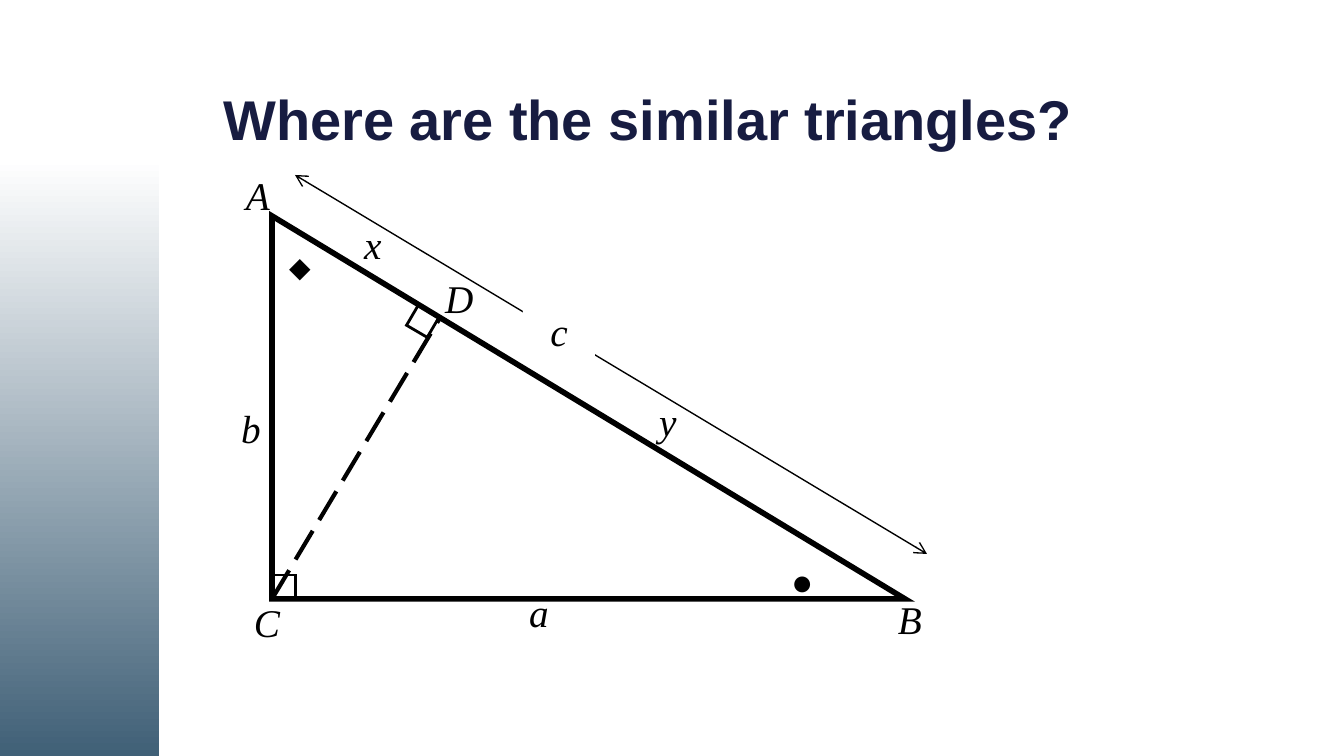
from pptx import Presentation
from pptx.dml.color import RGBColor
from pptx.enum.dml import MSO_LINE
from pptx.enum.shapes import MSO_CONNECTOR, MSO_SHAPE
from pptx.enum.text import MSO_ANCHOR, PP_ALIGN
from pptx.oxml.ns import qn
from pptx.util import Pt
from lxml.etree import SubElement

# Content: text, box in px
TITLE = ("Where are the similar triangles?", (210, 78, 898, 82))
POINTS = [
    ("D", (445, 274, 43, 59)),
    ("A", (246, 171, 43, 59)),
    ("C", (254, 598, 40, 59)),
    ("B", (898, 595, 43, 59)),
]
SIDES = [
    ("a", (516, 582, 87, 74)),
    ("b", (228, 398, 85, 79)),
    ("x", (351, 214, 105, 73)),
    ("y", (646, 391, 95, 85)),
]
LONG = ("c", (523, 301, 72, 58))
DOT = ("•", (778, 546, 67, 67))
GEM = ("◆", (276, 243, 67, 47))

# Figure corners in px
WIDE, HIGH = 1344, 756
LEFT, TOP, RIGHT, BASE = 272, 216, 905, 599
FOOT = (440, 318)
SPAN = ((927, 554), (295, 175))
MARK = 24
TILT = 300.4


class Theme:
    ink = RGBColor(0, 0, 0)
    line = RGBColor(1, 1, 1)
    white = RGBColor(255, 255, 255)
    band = RGBColor(0x40, 0x60, 0x77)
    title = dict(name="Arial", size=Pt(30), bold=True)
    head = RGBColor(0x17, 0x1C, 0x41)
    label = dict(name="Times New Roman", size=Pt(21), italic=True)
    dot = dict(name="Calibri", size=Pt(24))
    gem = dict(name="Calibri", size=Pt(15))


def px(n):
    return round(n * 914400 / 134.4)


def write(frame, text, font, ink=Theme.ink, inset=None):
    frame.word_wrap = True
    frame.vertical_anchor = MSO_ANCHOR.TOP
    if inset is not None:
        for side in ("left", "top", "right", "bottom"):
            setattr(frame, "margin_" + side, inset)
    run = frame.paragraphs[0].add_run()
    run.text = text
    for key, value in font.items():
        setattr(run.font, key, value)
    run.font.color.rgb = ink


def label(slide, item, font, **more):
    text, box = item
    frame = slide.shapes.add_textbox(*map(px, box)).text_frame
    write(frame, text, font, **more)


def shape(slide, kind, box, fill=None, width=None):
    item = slide.shapes.add_shape(kind, *map(px, box))
    item.shadow.inherit = False
    if fill is None:
        item.fill.background()
    else:
        item.fill.solid()
        item.fill.fore_color.rgb = fill
    if width is None:
        item.line.fill.background()
    else:
        item.line.color.rgb = Theme.ink
        item.line.width = Pt(width)
        SubElement(item.line._get_or_add_ln(), qn("a:miter"), lim="800000")
    return item


def line(slide, start, end, width, dash=None, heads=()):
    item = slide.shapes.add_connector(
        MSO_CONNECTOR.STRAIGHT, *map(px, start + end))
    item.line.color.rgb = Theme.line
    item.line.width = Pt(width)
    if dash:
        item.line.dash_style = dash
    for head in heads:
        SubElement(item.line._get_or_add_ln(), qn(head), type="arrow")
    SubElement(item._element.spPr, qn("a:effectLst"))


deck = Presentation()
deck.slide_width, deck.slide_height = px(WIDE), px(HIGH)
slide = deck.slides.add_slide(deck.slide_layouts[6])

# Side band
band = shape(slide, MSO_SHAPE.RECTANGLE, (0, 0, 159, HIGH))
band.fill.gradient()
band.fill.gradient_angle = 90
stops = [(0, Theme.band), (0.79, Theme.white)]
for stop, (place, ink) in zip(band.fill.gradient_stops, stops):
    stop.position = place
    stop.color.rgb = ink

# Angle marks
label(slide, DOT, Theme.dot)
shape(slide, MSO_SHAPE.RECTANGLE, (LEFT, BASE - MARK, MARK, MARK), width=1.5)
square = shape(slide, MSO_SHAPE.RECTANGLE, (411, 309, MARK, MARK),
               fill=Theme.white, width=1.5)
square.rotation = TILT

# Triangle, height and span
shape(slide, MSO_SHAPE.RIGHT_TRIANGLE,
      (LEFT, TOP, RIGHT - LEFT, BASE - TOP), width=3)
line(slide, (LEFT, BASE), FOOT, 2.25, dash=MSO_LINE.LONG_DASH)
line(slide, *SPAN, 0.75, heads=("a:headEnd", "a:tailEnd"))

# Labels
for item in POINTS:
    label(slide, item, Theme.label, inset=0)
text, box = LONG
gap = shape(slide, MSO_SHAPE.RECTANGLE, box, fill=Theme.white)
write(gap.text_frame, text, Theme.label)
gap.text_frame.paragraphs[0].alignment = PP_ALIGN.CENTER
for item in SIDES:
    label(slide, item, Theme.label)
label(slide, GEM, Theme.gem)
label(slide, TITLE, Theme.title, ink=Theme.head)

deck.save("out.pptx")
